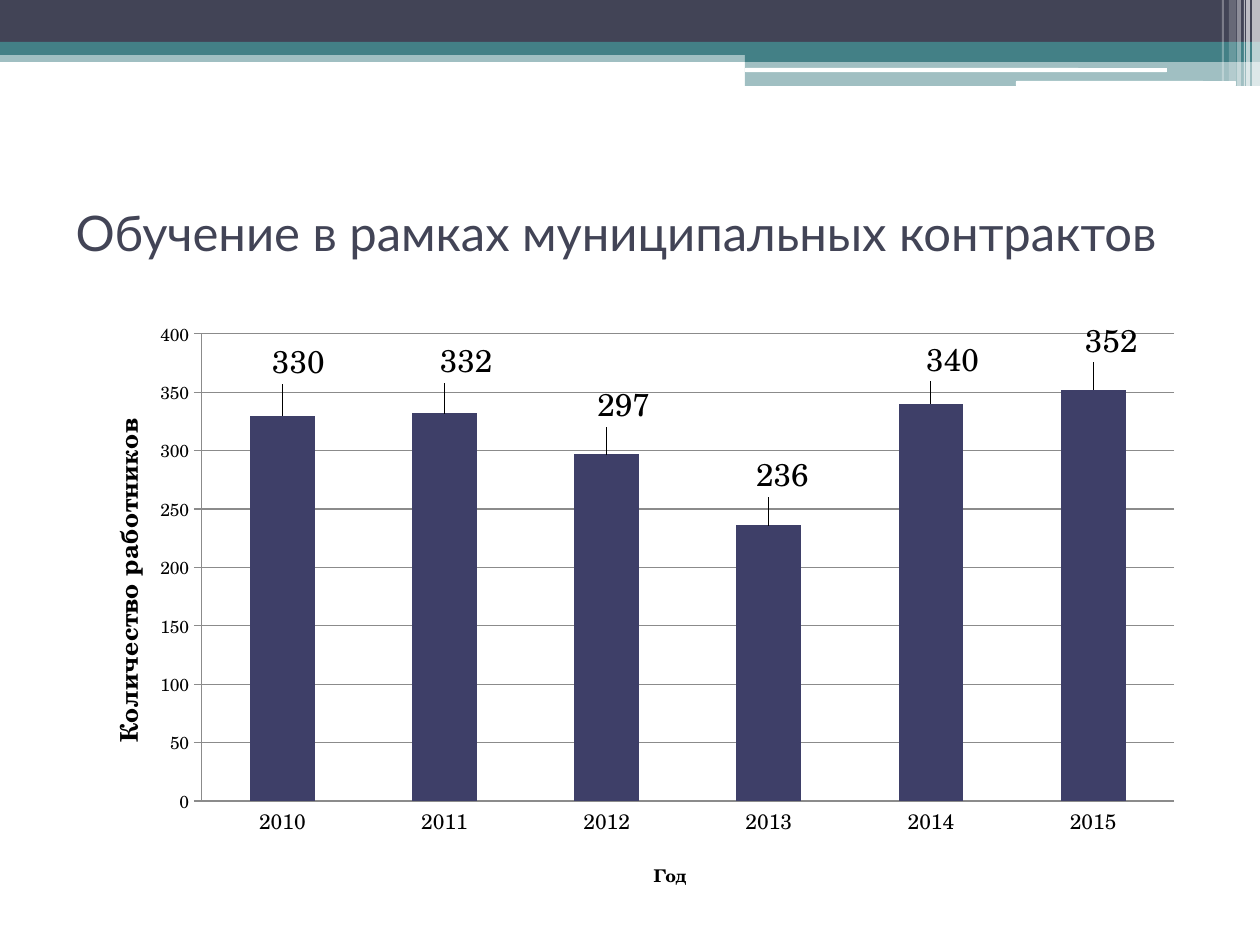
"""Build the slide about training under municipal contracts."""
from lxml import etree
from pptx import Presentation, util as u
from pptx.chart.data import CategoryChartData
from pptx.dml.color import RGBColor
from pptx.enum import chart as ch, shapes, text
from pptx.oxml import ns

THEME = {
    "dark": "424456", "teal": "438086", "white": "FFFFFF", "bar": "3E3F68",
    "grid": "8B8B8B", "ink": "000000", "heading": "Lato", "body": "TeX Gyre Schola",
    "title": 28, "label": 18, "value_title": 14, "category": 12, "small": 10,
}
SLIDE = (1260, 945)
TITLE = ("Обучение в рамках муниципальных контрактов", (63, 158, 1134, 147))
CHART_BOX = (63, 310, 1134, 596)
PLOT_BOX = (201, 334, 973, 467)
TRAINED = {"2010": 330, "2011": 332, "2012": 297, "2013": 236, "2014": 340, "2015": 352}
LABEL_SHIFTS = [(16, -26), (21, -25), (17, -22), (14, -23), (21, -17), (18, -22)]
VALUE_TITLE = ("Количество работников", (102, 415))
CATEGORY_TITLE = ("Год", (650, 858))
BANDS = [
    ((0, 50, 1260, 12), "teal", 50),
    ((0, 0, 1260, 43), "dark", 100),
    ((0, 42, 1260, 13), "teal", 100),
    ((745, 49, 515, 13), "teal", 100),
    ((745, 62, 515, 24), "teal", 50),
]
WHITE_LINES = [(745, 68, 422, 4), (1016, 81, 220, 5)]
STRIPES = [(1252, 8, 86, 65), (1246, 4, 86, 65), (1244, 1, 86, 60),
           (1237, 4, 86, 40), (1229, 7, 81, 20), (1222, 2, 81, 30)]


def px(length):
    return u.Emu(round(length * 914400 / 126))


def color(name):
    return RGBColor.from_string(THEME[name])


def apply(target, values):
    for name, value in values.items():
        setattr(target, name, value)


def set_font(font, size, face="body", ink="ink", bold=False):
    apply(font, {"size": u.Pt(THEME[size]), "name": THEME[face], "bold": bold})
    font.color.rgb = color(ink)


def add_band(slide, box, fill, opacity=100, kind=shapes.MSO_SHAPE.RECTANGLE):
    shape = slide.shapes.add_shape(kind, *map(px, box))
    shape.shadow.inherit = False
    shape.fill.solid()
    shape.fill.fore_color.rgb = color(fill)
    shape.line.fill.background()
    if opacity < 100:
        rgb = shape.fill._xPr.find(".//" + ns.qn("a:srgbClr"))
        etree.SubElement(rgb, ns.qn("a:alpha"), val=str(opacity * 1000))


def make_layout(**values):
    layout = etree.Element(ns.qn("c:layout"))
    manual = etree.SubElement(layout, ns.qn("c:manualLayout"))
    for name, value in values.items():
        etree.SubElement(manual, ns.qn("c:" + name), val=str(value))
    return layout


def place(element, index, layout):
    for previous in element.findall(ns.qn("c:layout")):
        element.remove(previous)
    element.insert(index, layout)


def fraction(x, y):
    left, top, width, height = CHART_BOX
    return {"x": round((x - left) / width, 3), "y": round((y - top) / height, 3)}


def title_axis(axis, wording, position, size):
    title = axis.axis_title
    title.text_frame.text = wording
    set_font(title.text_frame.paragraphs[0].runs[0].font, size, bold=True)
    place(title._element, 1, make_layout(xMode="edge", yMode="edge", **fraction(*position)))


def format_axes(chart):
    value_axis, category_axis = chart.value_axis, chart.category_axis
    apply(value_axis, {"minimum_scale": 0, "maximum_scale": 400, "major_unit": 50,
                       "has_major_gridlines": True,
                       "major_tick_mark": ch.XL_TICK_MARK.OUTSIDE})
    apply(category_axis, {"has_major_gridlines": False,
                          "major_tick_mark": ch.XL_TICK_MARK.NONE})
    for line in (value_axis.format.line, category_axis.format.line,
                 value_axis.major_gridlines.format.line):
        line.color.rgb = color("grid")
        line.width = u.Pt(0.75)
    set_font(value_axis.tick_labels.font, "small")
    set_font(category_axis.tick_labels.font, "category")
    title_axis(value_axis, *VALUE_TITLE, "value_title")
    title_axis(category_axis, *CATEGORY_TITLE, "small")


def format_series(plot):
    plot.gap_width = 150
    plot.vary_by_categories = False
    series = plot.series[0]
    series.format.fill.solid()
    series.format.fill.fore_color.rgb = color("bar")
    labels = series.data_labels
    apply(labels, {"show_value": True, "position": ch.XL_LABEL_POSITION.OUTSIDE_END})
    set_font(labels.font, "label")
    for index in range(len(LABEL_SHIFTS)):
        label = series.points[index].data_label
        set_font(label.font, "label")
        label.position = ch.XL_LABEL_POSITION.OUTSIDE_END
    for element, (right, down) in zip(labels._element.findall(ns.qn("c:dLbl")), LABEL_SHIFTS):
        place(element, 1, make_layout(x=round(right / CHART_BOX[2], 3),
                                      y=round(down / CHART_BOX[3], 3)))


def add_bar_chart(slide):
    data = CategoryChartData()
    data.categories = list(TRAINED)
    data.add_series("Series 1", list(TRAINED.values()))
    chart = slide.shapes.add_chart(
        ch.XL_CHART_TYPE.COLUMN_CLUSTERED, *map(px, CHART_BOX), data).chart
    apply(chart, {"has_legend": False, "has_title": False})
    set_font(chart.font, "small")
    format_axes(chart)
    format_series(chart.plots[0])
    left, top, width, height = PLOT_BOX
    plot_area = chart._chartSpace.find(".//" + ns.qn("c:plotArea"))
    place(plot_area, 0, make_layout(
        layoutTarget="inner", xMode="edge", yMode="edge", **fraction(left, top),
        w=round(width / CHART_BOX[2], 3), h=round(height / CHART_BOX[3], 3)))


def add_title(slide):
    wording, box = TITLE
    title = slide.shapes.title
    apply(title, dict(zip(("left", "top", "width", "height"), map(px, box))))
    frame = title.text_frame
    frame.text = wording
    apply(frame, {"word_wrap": True, "auto_size": text.MSO_AUTO_SIZE.NONE,
                  "vertical_anchor": text.MSO_ANCHOR.MIDDLE})
    paragraph = frame.paragraphs[0]
    paragraph.alignment = text.PP_ALIGN.LEFT
    set_font(paragraph.runs[0].font, "title", "heading", "dark")


def main():
    presentation = Presentation()
    apply(presentation, dict(zip(("slide_width", "slide_height"), map(px, SLIDE))))
    slide = presentation.slides.add_slide(presentation.slide_layouts[5])
    for band in BANDS:
        add_band(slide, *band)
    for box in WHITE_LINES:
        add_band(slide, box, "white", kind=shapes.MSO_SHAPE.ROUNDED_RECTANGLE)
    for left, width, height, opacity in STRIPES:
        add_band(slide, (left, 0, width, height), "white", opacity)
    add_title(slide)
    add_bar_chart(slide)
    presentation.save("out.pptx")


if __name__ == "__main__":
    main()
